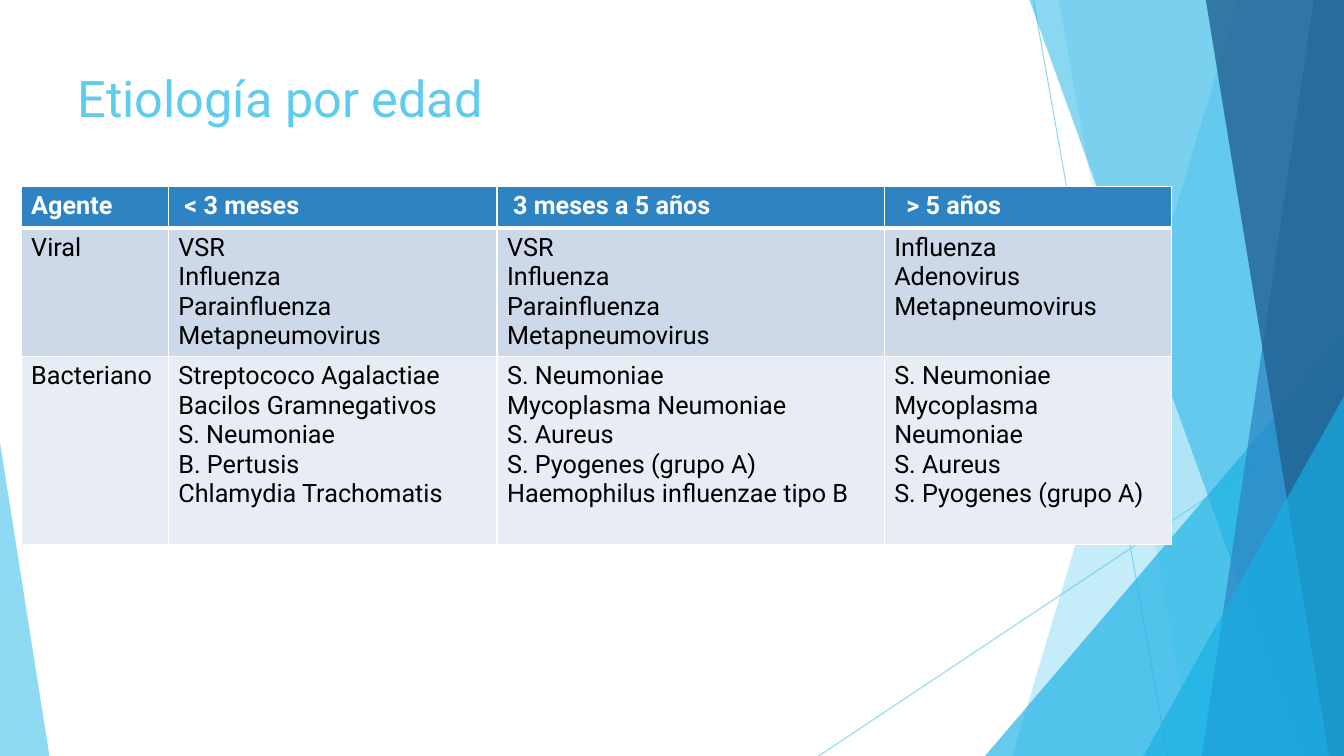
from lxml import etree
from pptx import Presentation
from pptx import util as u
from pptx.dml.color import RGBColor
from pptx.enum import shapes, text
from pptx.oxml import ns

FONT = "Roboto"
SKY, CYAN, BLUE, NAVY = "5FCBEF", "17B0E4", "2E83C3", "226292"
WHITE, BLACK = "FFFFFF", "000000"
ROW_FILLS = [BLUE, "CDD9E9", "E8EDF5"]
COLUMN_WIDTHS = [1.46, 3.26, 3.84, 2.85]
ROW_HEIGHTS = [0.41, 1.27, 1.87]
HEADER_INDENTS = [0, 0.06, 0.06, 0.12]
ROWS = [
    [["Agente"], ["< 3 meses"], ["3 meses a 5 años"], ["> 5 años"]],
    [["Viral"],
     ["VSR", "Influenza", "Parainfluenza", "Metapneumovirus"],
     ["VSR", "Influenza", "Parainfluenza", "Metapneumovirus"],
     ["Influenza", "Adenovirus", "Metapneumovirus"]],
    [["Bacteriano"],
     ["Streptococo Agalactiae", "Bacilos Gramnegativos", "S. Neumoniae",
      "B. Pertusis", "Chlamydia Trachomatis"],
     ["S. Neumoniae", "Mycoplasma Neumoniae", "S. Aureus",
      "S. Pyogenes (grupo A)", "Haemophilus influenzae tipo B"],
     ["S. Neumoniae", "Mycoplasma Neumoniae", "S. Aureus",
      "S. Pyogenes (grupo A)"]],
]


def rgb(value):
    """Turn a hex string into a colour."""
    return RGBColor.from_string(value)


def paint(fill, colour, opacity=100):
    """Set a solid fill with an opacity in percent."""
    fill.solid()
    fill.fore_color.rgb = rgb(colour)
    if opacity < 100:
        colour_element = fill._xPr.find(".//" + ns.qn("a:srgbClr"))
        etree.SubElement(colour_element, ns.qn("a:alpha"), val=str(opacity * 1000))


def finish(shape, colour, opacity):
    """Give a decorative shape its fill, without outline or shadow."""
    shape.shadow.inherit = False
    shape.line.fill.background()
    paint(shape.fill, colour, opacity)


def add_ray(slide, start, end):
    """Draw a thin translucent line."""
    points = [u.Inches(value) for value in (*start, *end)]
    ray = slide.shapes.add_connector(shapes.MSO_CONNECTOR.STRAIGHT, *points)
    ray.line.width = u.Pt(0.75)
    paint(ray.line.fill, SKY, 70)
    etree.SubElement(ray._element.spPr, ns.qn("a:effectLst"))


def add_facet(slide, corners, colour, opacity):
    """Draw a translucent polygon through its corners."""
    points = [(u.Inches(x), u.Inches(y)) for x, y in corners]
    builder = slide.shapes.build_freeform(*points[0])
    builder.add_line_segments(points[1:], close=True)
    finish(builder.convert_to_shape(), colour, opacity)


def add_triangle(slide, left, top, width, height, apex, colour, opacity):
    """Draw a triangle whose apex lies at a fraction of its width."""
    box = [u.Inches(value) for value in (left, top, width, height)]
    triangle = slide.shapes.add_shape(shapes.MSO_SHAPE.ISOSCELES_TRIANGLE, *box)
    triangle.adjustments[0] = apex
    finish(triangle, colour, opacity)


def add_backdrop(slide, left, top, width, height):
    """Fill the right and left edges of the box with angular facets."""
    right, bottom = left + width, top + height

    def add_panel(upper, lower, colour, opacity):
        """Draw a panel that reaches from a slanted side to the right edge."""
        corners = [(left + upper, top), (right, top),
                   (right, bottom), (left + lower, bottom)]
        add_facet(slide, corners, colour, opacity)

    def add_corner(wide, high, colour, opacity):
        """Draw a triangle in the lower right corner."""
        add_triangle(slide, right - wide, bottom - high, wide, high, 1,
                     colour, opacity)

    add_ray(slide, (left + 10.25, top), (left + 11.58, bottom))
    add_ray(slide, (right, top + 4.03), (left + 8.12, bottom))
    add_panel(12.28, 10.04, SKY, 36)
    add_panel(10.5, 11.83, SKY, 20)
    add_corner(3.56, 4.17, CYAN, 66)
    add_panel(10.21, 12.91, CYAN, 50)
    add_panel(13.03, 11.92, BLUE, 70)
    add_panel(11.96, 13.18, NAVY, 80)
    add_corner(1.99, 3.57, CYAN, 66)
    add_triangle(slide, left, bottom - 3.11, 0.49, 3.11, 0, SKY, 70)


def add_run(paragraph, words, size, colour, bold=False):
    """Append a formatted run."""
    run = paragraph.add_run()
    run.text = words
    run.font.name = FONT
    run.font.size = u.Pt(size)
    run.font.bold = bold
    run.font.color.rgb = rgb(colour)


def add_title(slide, left, top, width, height):
    """Place the slide title at the top of its box."""
    box = [u.Inches(value) for value in (left, top, width, height)]
    frame = slide.shapes.add_textbox(*box).text_frame
    frame.word_wrap = True
    frame.vertical_anchor = text.MSO_ANCHOR.TOP
    add_run(frame.paragraphs[0], "Etiología por edad", 36, SKY)


def add_borders(cell, row):
    """Draw white cell borders, thicker under the header."""
    weights = {"L": 1, "R": 1, "T": 3 if row == 1 else 1, "B": 3 if row == 0 else 1}
    properties = cell._tc.get_or_add_tcPr()
    for side, weight in weights.items():
        line = etree.SubElement(properties, ns.qn("a:ln" + side), w=str(u.Pt(weight)))
        fill = etree.SubElement(line, ns.qn("a:solidFill"))
        etree.SubElement(fill, ns.qn("a:srgbClr"), val=WHITE)


def fill_cell(cell, row, column, lines):
    """Write the lines of a cell and style it by its row."""
    header = row == 0
    add_borders(cell, row)
    paint(cell.fill, ROW_FILLS[row])
    if header:
        cell.margin_left = u.Inches(0.1 + HEADER_INDENTS[column])
    frame = cell.text_frame
    for index, line in enumerate(lines):
        paragraph = frame.add_paragraph() if index else frame.paragraphs[0]
        add_run(paragraph, line, 18, WHITE if header else BLACK, header)


def add_agents_table(slide, left, top):
    """Place the table of agents by age group."""
    box = [u.Inches(value)
           for value in (left, top, sum(COLUMN_WIDTHS), sum(ROW_HEIGHTS))]
    table = slide.shapes.add_table(len(ROWS), len(COLUMN_WIDTHS), *box).table
    table.horz_banding = False
    for column, width in zip(table.columns, COLUMN_WIDTHS):
        column.width = u.Inches(width)
    for row, height in zip(table.rows, ROW_HEIGHTS):
        row.height = u.Inches(height)
    for row, cells in enumerate(ROWS):
        for column, lines in enumerate(cells):
            fill_cell(table.cell(row, column), row, column, lines)


def main():
    """Build and save the presentation."""
    presentation = Presentation()
    presentation.slide_width = u.Inches(13.33)
    presentation.slide_height = u.Inches(7.5)
    slide = presentation.slides.add_slide(presentation.slide_layouts[6])
    add_backdrop(slide, 0, 0, 13.33, 7.5)
    add_agents_table(slide, 0.21, 1.85)
    add_title(slide, 0.67, 0.62, 9.4, 1.44)
    presentation.save("out.pptx")


if __name__ == "__main__":
    main()
